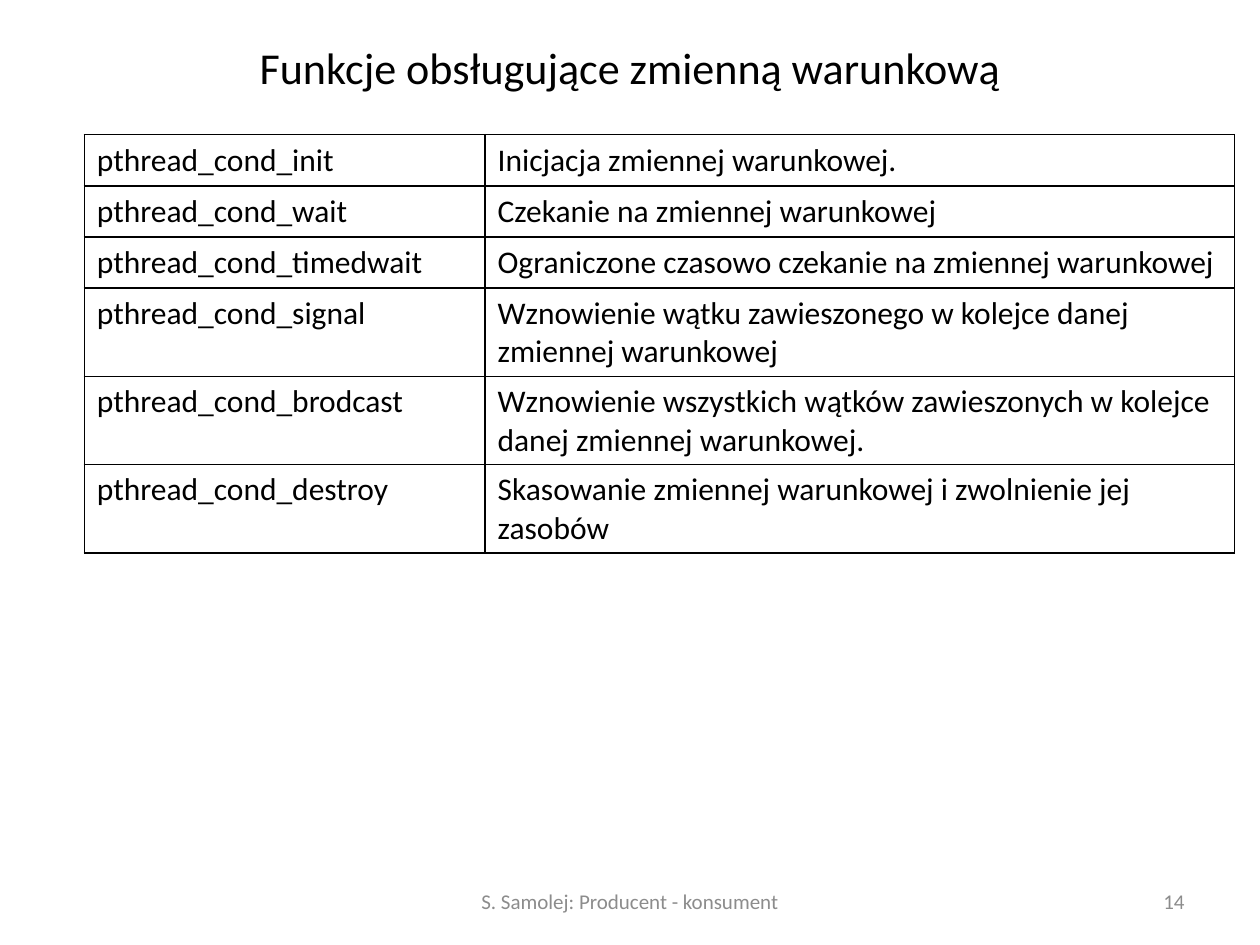
from lxml import etree
from pptx import Presentation
from pptx import util as u
from pptx.dml.color import RGBColor
from pptx.enum import text
from pptx.oxml import ns

COLOURS = {"ink": "000000", "muted": "8C8C8C", "paper": "FFFFFF"}

FUNCTIONS = [
    ("pthread_cond_init", "Inicjacja zmiennej warunkowej."),
    ("pthread_cond_wait", "Czekanie na zmiennej warunkowej"),
    ("pthread_cond_timedwait", "Ograniczone czasowo czekanie na zmiennej warunkowej"),
    ("pthread_cond_signal",
     "Wznowienie wątku zawieszonego w kolejce danej zmiennej warunkowej"),
    ("pthread_cond_brodcast",
     "Wznowienie wszystkich wątków zawieszonych w kolejce danej zmiennej warunkowej."),
    ("pthread_cond_destroy",
     "Skasowanie zmiennej warunkowej i zwolnienie jej zasobów"),
]


class SlideBuilder:
    """Holds the style and the current slide; lengths are in points."""

    font = "Calibri"
    border = 1

    def __init__(self, slide):
        self.slide = slide

    def style(self, paragraph, size, colour):
        paragraph.font.name = self.font
        paragraph.font.size = u.Pt(size)
        paragraph.font.color.rgb = RGBColor.from_string(COLOURS[colour])

    def label(self, wording, box, size, colour, align):
        frame = self.slide.shapes.add_textbox(*map(u.Pt, box)).text_frame
        frame.word_wrap = True
        frame.vertical_anchor = text.MSO_ANCHOR.MIDDLE
        line = frame.paragraphs[0]
        line.text = wording
        line.alignment = align
        self.style(line, size, colour)

    def outline(self, cell):
        properties = cell._tc.get_or_add_tcPr()
        for side in ("a:lnL", "a:lnR", "a:lnT", "a:lnB"):
            edge = etree.SubElement(properties, ns.qn(side), w=str(u.Pt(self.border)))
            fill = etree.SubElement(edge, ns.qn("a:solidFill"))
            etree.SubElement(fill, ns.qn("a:srgbClr"), val=COLOURS["ink"])

    def table(self, rows, left, top, widths, row_height, size):
        grid = self.slide.shapes.add_table(
            len(rows), len(widths), u.Pt(left), u.Pt(top),
            u.Pt(sum(widths)), u.Pt(row_height * len(rows))).table
        grid.first_row = grid.horz_banding = False
        for column, width in zip(grid.columns, widths):
            column.width = u.Pt(width)
        for row, wordings in zip(grid.rows, rows):
            row.height = u.Pt(row_height)
            for cell, wording in zip(row.cells, wordings):
                cell.text = wording
                self.style(cell.text_frame.paragraphs[0], size, "ink")
                self.outline(cell)
                cell.fill.background()


def main():
    deck = Presentation()
    deck.slide_width, deck.slide_height = u.Pt(720), u.Pt(540)
    slide = deck.slides.add_slide(deck.slide_layouts[6])
    slide.background.fill.solid()
    slide.background.fill.fore_color.rgb = RGBColor.from_string(COLOURS["paper"])
    builder = SlideBuilder(slide)

    # Title
    builder.label("Funkcje obsługujące zmienną warunkową",
                  (36, 21.6, 648, 33.1), 25.2, "ink", text.PP_ALIGN.CENTER)

    # Functions and their descriptions; rows grow with wrapped text
    builder.table(FUNCTIONS, 48.2, 77, (229, 428.4), 29.2, 18)

    # Footer and page number
    builder.label("S. Samolej: Producent - konsument",
                  (246, 500.5, 228, 28.8), 12, "muted", text.PP_ALIGN.CENTER)
    builder.label("14", (516, 500.5, 168, 28.8), 12, "muted", text.PP_ALIGN.RIGHT)

    deck.save("out.pptx")


if __name__ == "__main__":
    main()
